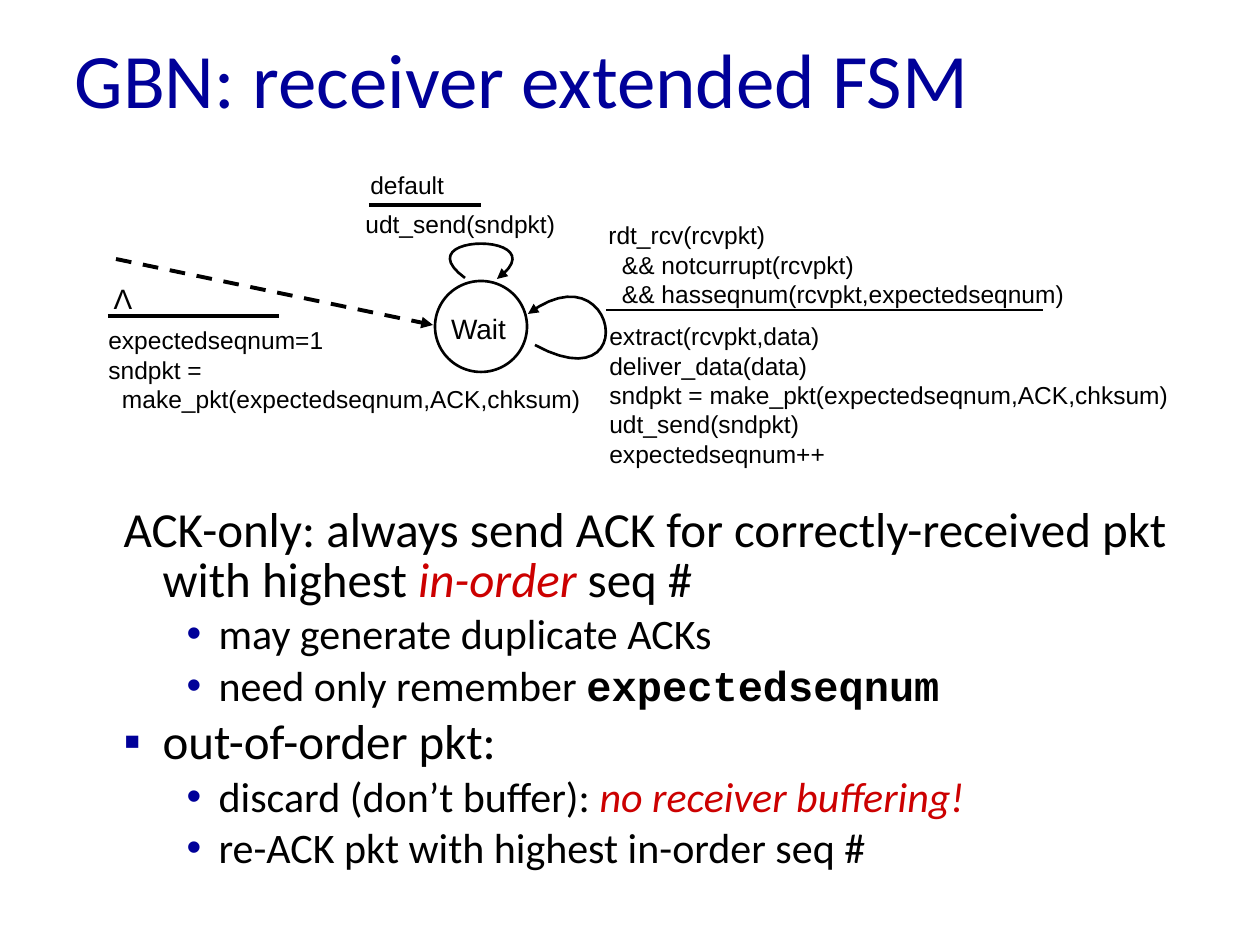
from dataclasses import dataclass

from lxml import etree
from pptx import Presentation
from pptx.dml.color import RGBColor
from pptx.enum.dml import MSO_LINE
from pptx.enum.shapes import MSO_CONNECTOR, MSO_SHAPE
from pptx.enum.text import MSO_ANCHOR, MSO_AUTO_SIZE, PP_ALIGN
from pptx.oxml.ns import qn
from pptx.util import Pt

DASH = MSO_LINE.DASH
STRAIGHT = MSO_CONNECTOR.STRAIGHT
OVAL = MSO_SHAPE.OVAL
MIDDLE, TOP = MSO_ANCHOR.MIDDLE, MSO_ANCHOR.TOP
NO_AUTOFIT = MSO_AUTO_SIZE.NONE
LEFT, CENTER = PP_ALIGN.LEFT, PP_ALIGN.CENTER
PX = 914400 / 126  # EMU per pixel


@dataclass
class Theme:
    navy: RGBColor = RGBColor(0x00, 0x00, 0x99)
    black: RGBColor = RGBColor(0x00, 0x00, 0x00)
    white: RGBColor = RGBColor(0xFF, 0xFF, 0xFF)
    red: RGBColor = RGBColor(0xCC, 0x00, 0x00)
    text_font: str = "Calibri"
    label_font: str = "Arial"
    code_font: str = "Courier New"
    title_size: int = 44
    body_sizes: tuple = (28, 24)
    state_size: int = 16
    label_size: int = 14
    thin: float = 1.5
    thick: float = 2.25


theme = Theme()


def px(*lengths):
    return [round(length * PX) for length in lengths]


def style_line(shape, width, arrow=False):
    shape.line.color.rgb = theme.black
    shape.line.width = Pt(width)
    properties = shape._element.spPr
    if properties.find(qn("a:effectLst")) is None:
        etree.SubElement(properties, qn("a:effectLst"))
    if arrow:
        line = shape.line._get_or_add_ln()
        etree.SubElement(line, qn("a:tailEnd"), type="triangle")


presentation = Presentation()
presentation.slide_width, presentation.slide_height = px(1260, 945)
slide = presentation.slides.add_slide(presentation.slide_layouts[1])
title, body = slide.shapes.title, slide.placeholders[1]

# Title
title.left, title.top, title.width, title.height = px(62, 29, 1071, 97)
title.text_frame.text = "GBN: receiver extended FSM"
title.text_frame.vertical_anchor = MIDDLE
title.text_frame.auto_size = NO_AUTOFIT
paragraph = title.text_frame.paragraphs[0]
paragraph.alignment = LEFT
font = paragraph.runs[0].font
font.name, font.size = theme.text_font, Pt(theme.title_size)
font.color.rgb = theme.navy

# Body list: level, bullet, runs of (text, style)
body.left, body.top, body.width, body.height = px(111, 501, 1123, 393)
body.text_frame.auto_size = NO_AUTOFIT
body.text_frame.vertical_anchor = TOP
body_items = [
    (0, None, [("ACK-only: always send ACK for correctly-received pkt with highest ", ""),
               ("in-order", "emphasis"), (" seq #", "")]),
    (1, "•", [("may generate duplicate ACKs", "")]),
    (1, "•", [("need only remember ", ""), ("expectedseqnum", "code")]),
    (0, "▪", [("out-of-order pkt:", "")]),
    (1, "•", [("discard (don’t buffer): ", ""), ("no receiver buffering!", "emphasis")]),
    (1, "•", [("re-ACK pkt with highest in-order seq #", "")]),
]
indents = [(39, -39), (95, -32)]
for index, (level, bullet, runs) in enumerate(body_items):
    frame = body.text_frame
    paragraph = frame.add_paragraph() if index else frame.paragraphs[0]
    size = theme.body_sizes[level]
    paragraph.level = level
    paragraph.line_spacing = 0.85
    paragraph.space_before = Pt(round(size * 0.2, 1) if index else 0)
    properties = paragraph._p.get_or_add_pPr()
    margin, indent = px(*indents[level])
    properties.set("marL", str(margin))
    properties.set("indent", str(indent))
    if bullet:
        color = etree.SubElement(properties, qn("a:buClr"))
        etree.SubElement(color, qn("a:srgbClr"), val=str(theme.navy))
        etree.SubElement(properties, qn("a:buFont"), typeface=theme.label_font)
        etree.SubElement(properties, qn("a:buChar"), char=bullet)
    else:
        etree.SubElement(properties, qn("a:buNone"))
    for text, style in runs:
        run = paragraph.add_run()
        run.text = text
        run.font.name = theme.code_font if style == "code" else theme.text_font
        run.font.size = Pt(size)
        run.font.bold = style == "code"
        run.font.italic = style == "emphasis"
        run.font.color.rgb = theme.red if style == "emphasis" else theme.black

# State circle
state = slide.shapes.add_shape(OVAL, *px(435, 281, 92, 91))
state.shadow.inherit = False
state.fill.solid()
state.fill.fore_color.rgb = theme.white
style_line(state, theme.thin)

# Initial transition and the rules between events and actions
lines = [
    ((116, 259, 433, 325), theme.thick, True),
    ((369, 205, 481, 205), theme.thick, False),
    ((606, 310, 1043, 310), theme.thin, False),
    ((108, 316, 279, 316), theme.thick, False),
]
for ends, width, is_initial in lines:
    connector = slide.shapes.add_connector(STRAIGHT, *px(*ends))
    if is_initial:
        connector.line.dash_style = DASH
    style_line(connector, width, arrow=is_initial)

# Self-loops: cubic curves given by start, two controls and end
loops = [
    ((535, 345), (643, 404), (617, 246), (528, 314)),
    ((465, 278), (402, 232), (561, 232), (497, 279)),
]
steps = 24
for controls in loops:
    points = []
    for step in range(steps + 1):
        t = step / steps
        weights = ((1 - t) ** 3, 3 * t * (1 - t) ** 2, 3 * t * t * (1 - t), t ** 3)
        points.append(tuple(
            round(sum(w * point[axis] for w, point in zip(weights, controls)) * PX)
            for axis in (0, 1)))
    builder = slide.shapes.build_freeform(*points[0])
    builder.add_line_segments(points[1:], close=False)
    loop = builder.convert_to_shape()
    loop.shadow.inherit = False
    loop.fill.background()
    style_line(loop, theme.thin, arrow=True)

# Labels: box, size, alignment, lines
labels = [
    ((423, 305, 111, 33), theme.state_size, CENTER, ["Wait"]),
    ((101, 275, 44, 47), theme.state_size, CENTER, ["Λ"]),
    ((353, 203, 223, 43), theme.label_size, LEFT, ["udt_send(sndpkt)"]),
    ((358, 164, 100, 34), theme.label_size, LEFT, ["default"]),
    ((596, 214, 491, 78), theme.label_size, LEFT,
     ["rdt_rcv(rcvpkt)", "  && notcurrupt(rcvpkt)",
      "  && hasseqnum(rcvpkt,expectedseqnum)"]),
    ((597, 315, 595, 118), theme.label_size, LEFT,
     ["extract(rcvpkt,data)", "deliver_data(data)",
      "sndpkt = make_pkt(expectedseqnum,ACK,chksum)",
      "udt_send(sndpkt)", "expectedseqnum++"]),
    ((96, 319, 501, 135), theme.label_size, LEFT,
     ["expectedseqnum=1", "sndpkt =", "  make_pkt(expectedseqnum,ACK,chksum)"]),
]
for box, size, alignment, text_lines in labels:
    label = slide.shapes.add_textbox(*px(*box))
    label.text_frame.word_wrap = True
    label.text_frame.text = "\n".join(text_lines)
    for paragraph in label.text_frame.paragraphs:
        paragraph.alignment = alignment
        font = paragraph.runs[0].font
        font.name, font.size = theme.label_font, Pt(size)
        font.color.rgb = theme.black

presentation.save("out.pptx")
